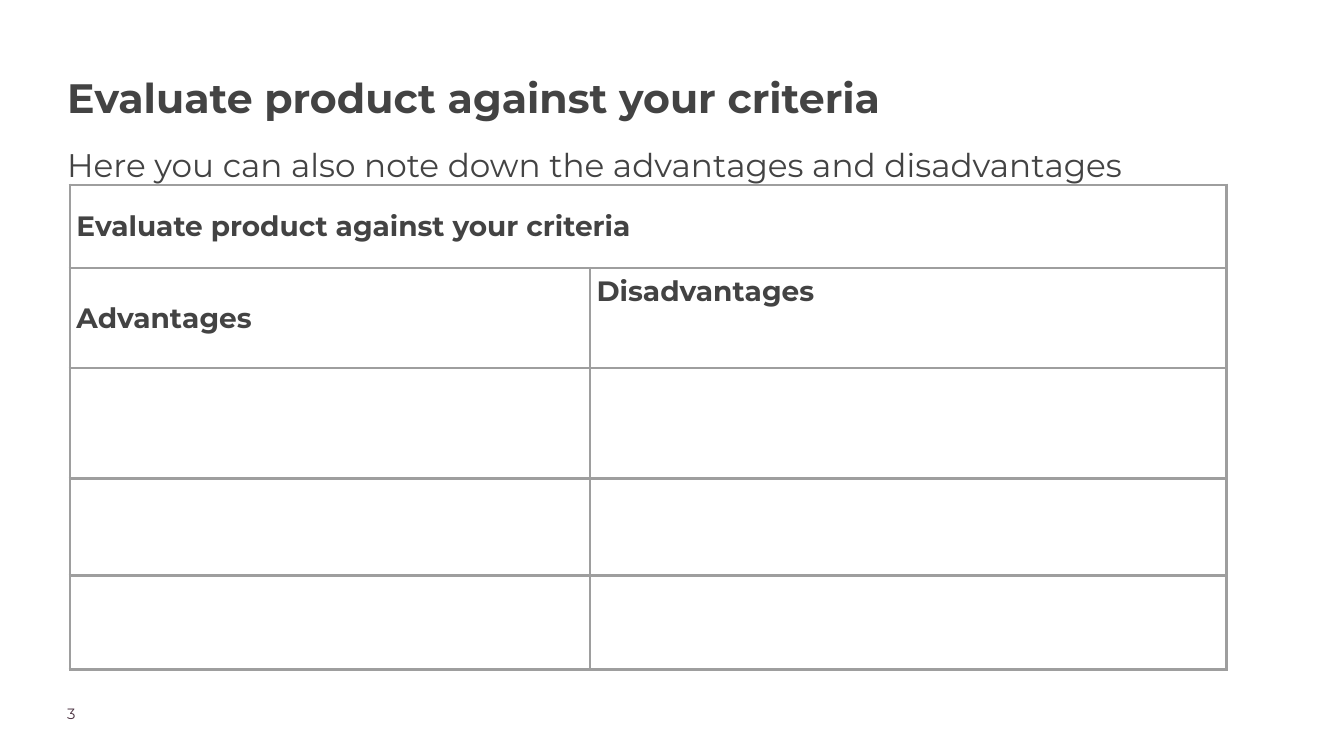
import pptx
import pptx.dml.color
import pptx.enum.text
import pptx.oxml
import pptx.oxml.ns
import pptx.util

Cm, Pt = pptx.util.Cm, pptx.util.Pt
ANCHOR = pptx.enum.text.MSO_ANCHOR
HEX = {"text": "434343", "page": "4B3241", "grid": "9E9E9E"}


class Deck:
    font = "Montserrat"

    def __init__(self, wide, high):
        self.prs = pptx.Presentation()
        self.prs.slide_width, self.prs.slide_height = Cm(wide), Cm(high)
        self.slide = self.prs.slides.add_slide(self.prs.slide_layouts[5])

    def label(self, frame, text, size, color="text", bold=False, line=None):
        """Fill a text frame with one styled, left-aligned paragraph."""
        frame.text = text
        par = frame.paragraphs[0]
        par.alignment = pptx.enum.text.PP_ALIGN.LEFT
        if line:
            par.line_spacing = line
        for run in par.runs:
            run.font.name, run.font.size, run.font.bold = self.font, Pt(size), bold
            run.font.color.rgb = pptx.dml.color.RGBColor.from_string(HEX[color])

    def fit(self, frame):
        """Remove the margins and keep the frame at its given size."""
        frame.margin_left = frame.margin_right = 0
        frame.margin_top = frame.margin_bottom = 0
        frame.vertical_anchor = ANCHOR.TOP
        frame.word_wrap = True
        frame.auto_size = pptx.enum.text.MSO_AUTO_SIZE.NONE

    def title(self, box, text, size, **look):
        shape = self.slide.shapes.title
        shape.left, shape.top, shape.width, shape.height = map(Cm, box)
        self.fit(shape.text_frame)
        self.label(shape.text_frame, text, size, **look)

    def text(self, box, text, size, **look):
        shape = self.slide.shapes.add_textbox(*map(Cm, box))
        self.fit(shape.text_frame)
        self.label(shape.text_frame, text, size, **look)

    def edge(self, cell, width=3):
        """Draw all four borders of a table cell."""
        props = cell._tc.get_or_add_tcPr()
        for side in "LRTB":
            props.append(pptx.oxml.parse_xml(
                f'<a:ln{side} {pptx.oxml.ns.nsdecls("a")} w="{Pt(width)}"><a:solidFill>'
                f'<a:srgbClr val="{HEX["grid"]}"/></a:solidFill></a:ln{side}>'))

    def table(self, left, top, cols, rows, heads, size):
        """Draw a grid; heads maps (row, column) to text and anchor."""
        table = self.slide.shapes.add_table(
            len(rows), len(cols), Cm(left), Cm(top), Cm(sum(cols)), Cm(sum(rows))).table
        table.first_row = table.horz_banding = False
        for col, width in zip(table.columns, cols):
            col.width = Cm(width)
        for row, height in zip(table.rows, rows):
            row.height = Cm(height)
        for cell in table.iter_cells():
            self.edge(cell)
            cell.fill.background()
            cell.margin_left = cell.margin_right = Cm(0.25)
            cell.margin_top = cell.margin_bottom = Cm(0.25)
        table.cell(0, 0).merge(table.cell(0, len(cols) - 1))
        for spot, (text, anchor) in heads.items():
            cell = table.cell(*spot)
            cell.vertical_anchor = anchor
            self.label(cell.text_frame, text, size, bold=True)


def main():
    topic = "Evaluate product against your criteria"
    heads = {
        (0, 0): (topic, ANCHOR.MIDDLE),
        (1, 0): ("Advantages", ANCHOR.MIDDLE),
        (1, 1): ("Disadvantages", ANCHOR.TOP),
    }
    deck = Deck(50.8, 28.58)
    deck.text((2.54, 26.62, 4, 1), "3", 16, color="page")
    deck.title((2.54, 2.46, 36.68, 4.52), topic, 44, bold=True, line=1.15)
    deck.table(2.64, 6.99, [19.66, 24.05], [3.15, 3.78, 4.17, 3.66, 3.56], heads, 30)
    deck.text((2.54, 5.05, 40.54, 2.92),
              "Here you can also note down the advantages and disadvantages", 35, line=1.3)
    deck.prs.save("out.pptx")


if __name__ == "__main__":
    main()
